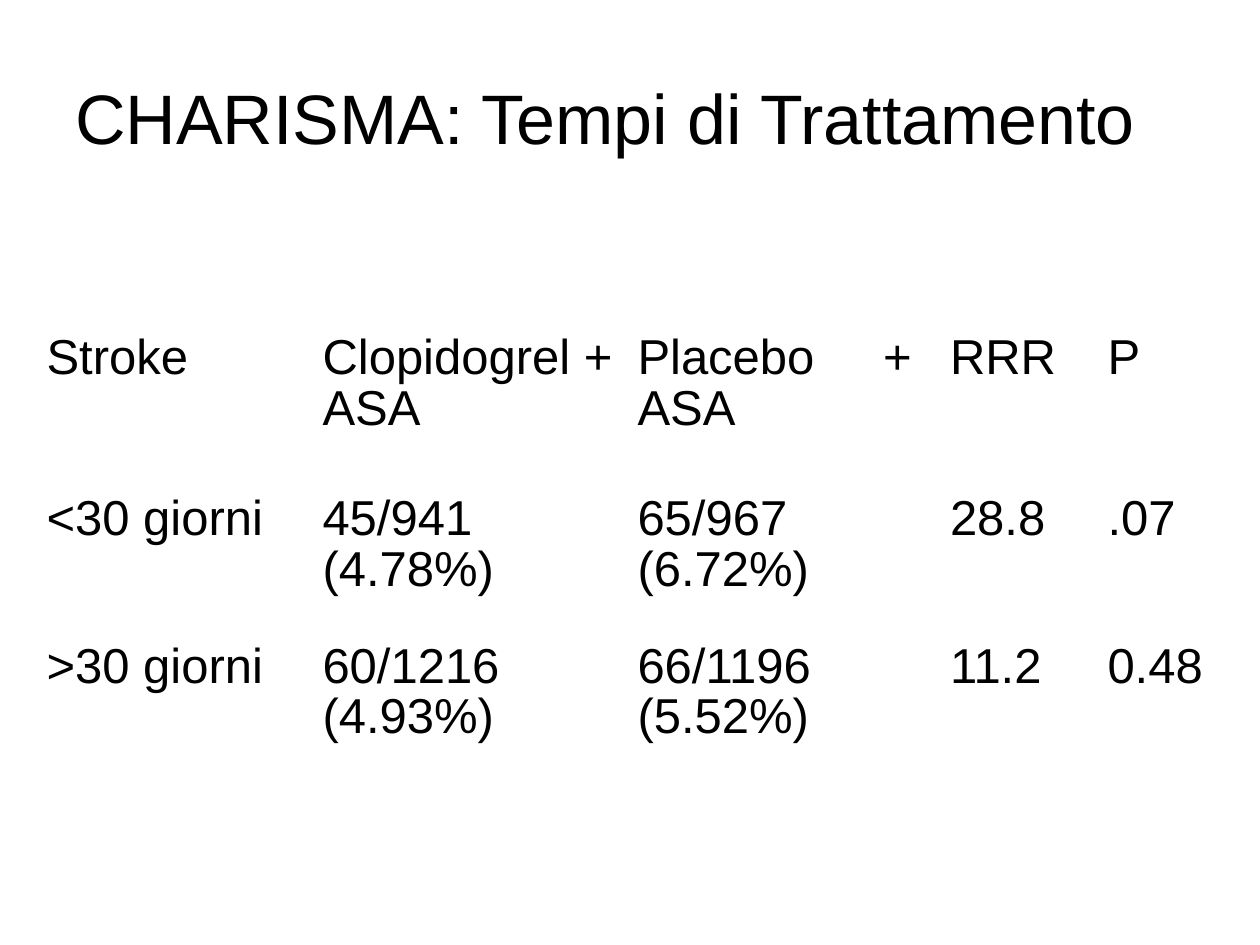
from lxml.etree import SubElement
from pptx import Presentation
from pptx.dml.color import RGBColor
from pptx.enum.text import MSO_ANCHOR as Anchor
from pptx.oxml.ns import qn
from pptx.util import Inches, Pt

BLACK = RGBColor(0, 0, 0)
WHITE = RGBColor(255, 255, 255)


def write(frame, text, size, space=1.0, tab=None):
    frame.word_wrap = True
    para = frame.paragraphs[0]
    para.line_spacing = space
    if tab:
        tabs = SubElement(para._p.get_or_add_pPr(), qn("a:tabLst"))
        SubElement(tabs, qn("a:tab"), pos=str(Inches(tab)), algn="l")
    run = para.add_run()
    run.text = text
    run.font.name = "Arial"
    run.font.size = Pt(size)
    run.font.color.rgb = BLACK


def edge(cell, side, width):
    line = SubElement(cell._tc.get_or_add_tcPr(), qn("a:" + side), w=str(Pt(width)))
    fill = SubElement(line, qn("a:solidFill"))
    SubElement(fill, qn("a:srgbClr"), val=str(WHITE))


deck = Presentation()
deck.slide_width = Inches(10)
deck.slide_height = Inches(7.5)
slide = deck.slides.add_slide(deck.slide_layouts[6])

title = slide.shapes.add_textbox(Inches(0.5), Inches(0.3), Inches(9), Inches(1.25))
title.text_frame.vertical_anchor = Anchor.MIDDLE
write(title.text_frame, "CHARISMA: Tempi di Trattamento", 40)

data = [
    ["Stroke", "Clopidogrel + ASA", "Placebo\t+ ASA", "RRR", "P"],
    ["<30 giorni", "45/941 (4.78%)", "65/967 (6.72%)", "28.8", ".07"],
    [">30 giorni", "60/1216 (4.93%)", "66/1196 (5.52%)", "11.2", "0.48"],
]
widths = [2.19, 2.5, 2.48, 1.25, 1.11]
heights = [1.28, 1.17, 1.17]
table = slide.shapes.add_table(
    len(heights), len(widths), Inches(0.27), Inches(2.57),
    Inches(sum(widths)), Inches(sum(heights)),
).table
table.first_row = False
table.horz_banding = False
for col, width in zip(table.columns, widths):
    col.width = Inches(width)
for row, height in zip(table.rows, heights):
    row.height = Inches(height)

for r, line in enumerate(data):
    for c, text in enumerate(line):
        cell = table.cell(r, c)
        cell.margin_left = cell.margin_right = Inches(0.1)
        cell.margin_top = Inches(0.08)
        cell.margin_bottom = Inches(0.05)
        write(cell.text_frame, text, 28, space=0.93, tab=1.95 if "\t" in text else None)
        outer = {
            "lnL": c == 0,
            "lnR": c == len(widths) - 1,
            "lnT": r == 0,
            "lnB": r == len(heights) - 1,
        }
        for side, thick in outer.items():
            edge(cell, side, 1.08 if thick else 0.45)
        cell.fill.background()

deck.save("out.pptx")
